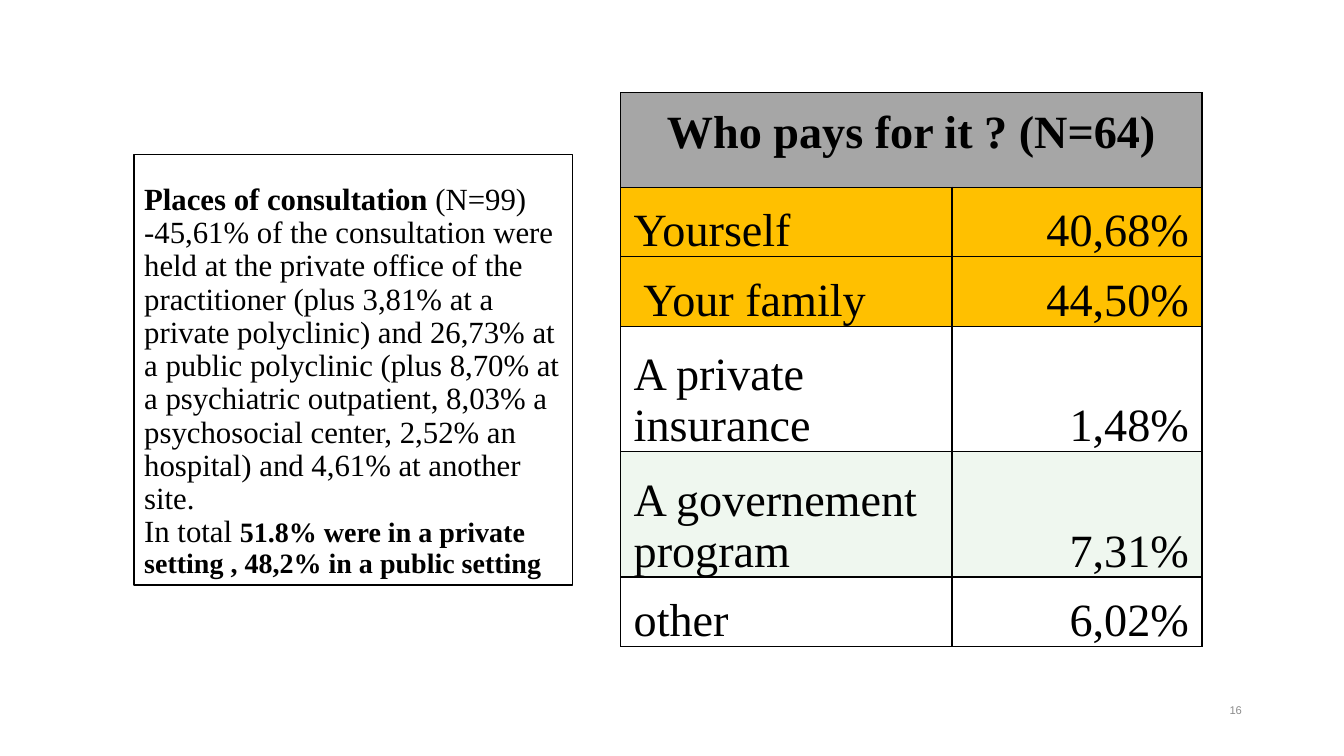
from lxml import etree
from pptx import Presentation
from pptx.dml.color import RGBColor
from pptx.enum.text import MSO_ANCHOR, MSO_AUTO_SIZE, PP_ALIGN
from pptx.oxml.ns import qn
from pptx.util import Cm, Pt

LEFT, CENTER, RIGHT = PP_ALIGN.LEFT, PP_ALIGN.CENTER, PP_ALIGN.RIGHT
TOP, MIDDLE, BOTTOM = MSO_ANCHOR.TOP, MSO_ANCHOR.MIDDLE, MSO_ANCHOR.BOTTOM
NO_AUTOFIT = MSO_AUTO_SIZE.NONE
SERIF = "Times New Roman"

CONSULTATION_LINES = [
    [("Places of consultation ", 22, True), ("(N=99)", 22, False)],
    [("-45,61% of the consultation were held at the private office of the "
      "practitioner (plus 3,81% at a private polyclinic) and 26,73% at a public "
      "polyclinic (plus 8,70% at a psychiatric outpatient, 8,03% a psychosocial "
      "center, 2,52% an hospital) and 4,61% at another site.", 22, False)],
    [("In total ", 22, False),
     ("51.8% were in a private setting , 48,2% in a public setting", 20, True)],
]
TABLE_HEADING = "Who pays for it\u00a0? (N=64)"
PAYERS = [
    ("Yourself", "40,68%", "FFC000", 1.75),
    (" Your family", "44,50%", "FFC000", 1.75),
    ("A private insurance", "1,48%", None, 3.16),
    ("A governement program", "7,31%", "EFF7EF", 3.16),
    ("other", "6,02%", None, 1.75),
]
COLUMN_WIDTHS = [8.35, 6.3]
HEADING_HEIGHT = 2.38
PAGE_NUMBER = "16"


def color(value):
    return RGBColor.from_string(value)


def format_font(font, size, bold=False, name=SERIF, value="000000"):
    font.name = name
    font.size = Pt(size)
    font.bold = bold
    font.color.rgb = color(value)


def add_borders(cell):
    properties = cell._tc.get_or_add_tcPr()
    for side in ("a:lnL", "a:lnR", "a:lnT", "a:lnB"):
        line = etree.SubElement(properties, qn(side), w=str(Pt(1)))
        fill = etree.SubElement(line, qn("a:solidFill"))
        etree.SubElement(fill, qn("a:srgbClr"), val="000000")


def format_cell(cell, text, align, anchor, margins, fill, bold=False):
    cell.text_frame.text = text
    cell.vertical_anchor = anchor
    cell.margin_left = cell.margin_right = Cm(margins[0])
    cell.margin_top, cell.margin_bottom = Cm(margins[1]), Cm(margins[2])
    paragraph = cell.text_frame.paragraphs[0]
    paragraph.alignment = align
    format_font(paragraph.runs[0].font, 33, bold)
    if fill:
        cell.fill.solid()
        cell.fill.fore_color.rgb = color(fill)
    else:
        cell.fill.background()


def add_consultation(page):
    box = page.shapes.title
    box.left, box.top, box.width, box.height = Cm(3.38), Cm(3.89), Cm(11.05), Cm(10.85)
    box.fill.solid()
    box.fill.fore_color.rgb = color("FFFFFF")
    box.line.color.rgb = color("000000")
    box.line.width = Pt(1)
    frame = box.text_frame
    frame.word_wrap = True
    frame.auto_size = NO_AUTOFIT
    frame.vertical_anchor = BOTTOM
    paragraph = frame.paragraphs[0]
    paragraph.alignment = LEFT
    paragraph.line_spacing = 0.9
    for index, line in enumerate(CONSULTATION_LINES):
        if index:
            paragraph.add_line_break()
        for text, size, bold in line:
            span = paragraph.add_run()
            span.text = text
            format_font(span.font, size, bold)
    for line_break in paragraph._p.findall(qn("a:br")):
        etree.SubElement(line_break, qn("a:rPr"), sz="2200")


def add_payers(page):
    heights = [HEADING_HEIGHT] + [payer[3] for payer in PAYERS]
    table = page.shapes.add_table(
        len(heights), len(COLUMN_WIDTHS), Cm(15.64), Cm(2.34),
        Cm(sum(COLUMN_WIDTHS)), Cm(sum(heights))).table
    table.first_row = table.horz_banding = False
    for column, width in zip(table.columns, COLUMN_WIDTHS):
        column.width = Cm(width)
    for row, height in zip(table.rows, heights):
        row.height = Cm(height)
    for cell in table.iter_cells():
        add_borders(cell)
    heading = table.cell(0, 0)
    heading.merge(table.cell(0, 1))
    format_cell(heading, TABLE_HEADING, CENTER, TOP, (0.71, 0.36, 0.36), "A6A6A6", True)
    for row, (payer, share, fill, _) in enumerate(PAYERS, start=1):
        for column, (text, align) in enumerate([(payer, LEFT), (share, RIGHT)]):
            format_cell(table.cell(row, column), text, align, BOTTOM,
                        (0.33, 0.08, 0), fill)


def add_page_number(page):
    box = page.shapes.add_textbox(Cm(23.93), Cm(17.37), Cm(7.62), Cm(1.02))
    frame = box.text_frame
    frame.text = PAGE_NUMBER
    frame.word_wrap = True
    frame.vertical_anchor = MIDDLE
    paragraph = frame.paragraphs[0]
    paragraph.alignment = RIGHT
    format_font(paragraph.runs[0].font, 8, name="Arial", value="8C8C8C")


def main():
    deck = Presentation()
    deck.slide_width, deck.slide_height = Cm(33.87), Cm(19.05)
    page = deck.slides.add_slide(deck.slide_layouts[5])
    add_page_number(page)
    add_consultation(page)
    add_payers(page)
    deck.save("out.pptx")


if __name__ == "__main__":
    main()
